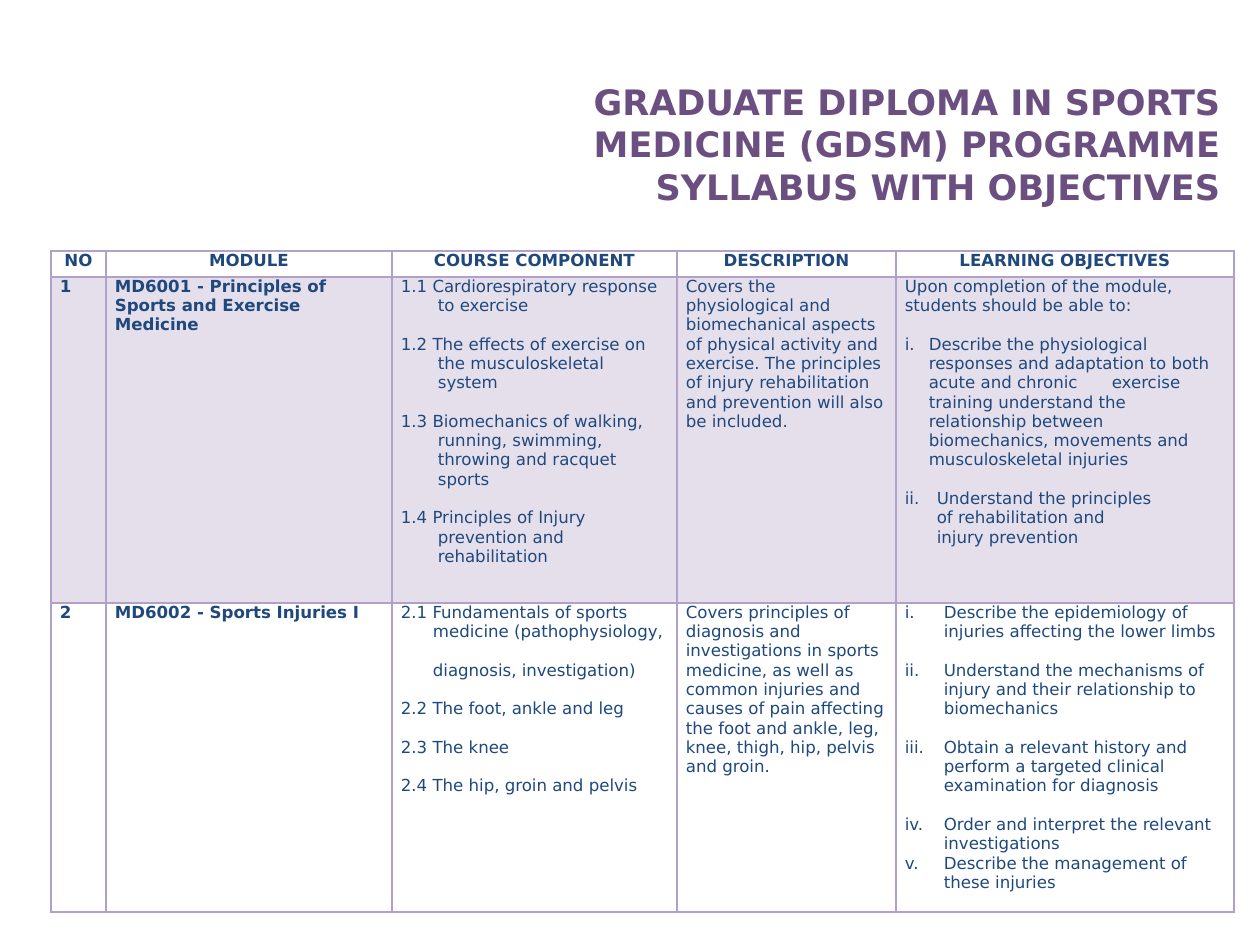
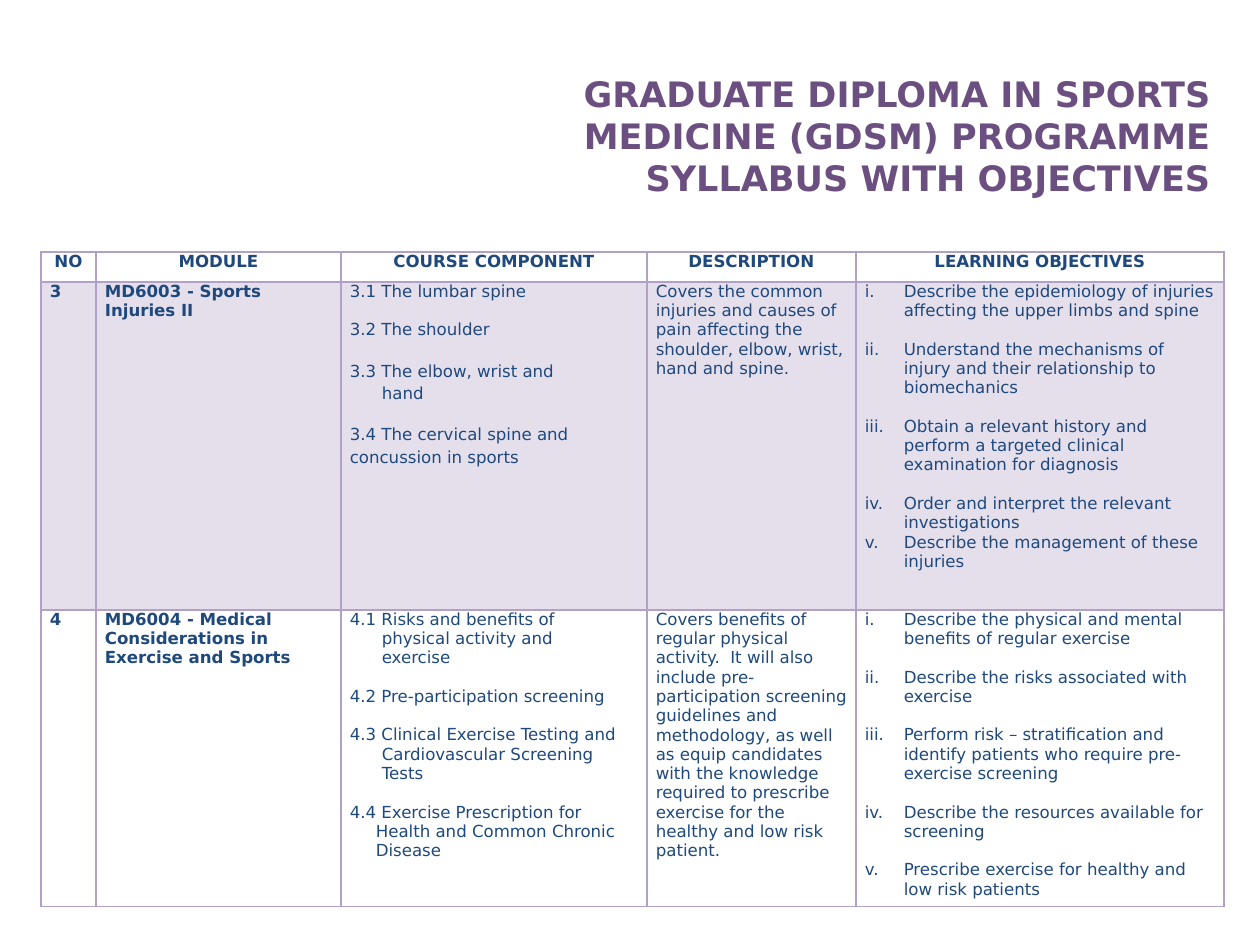
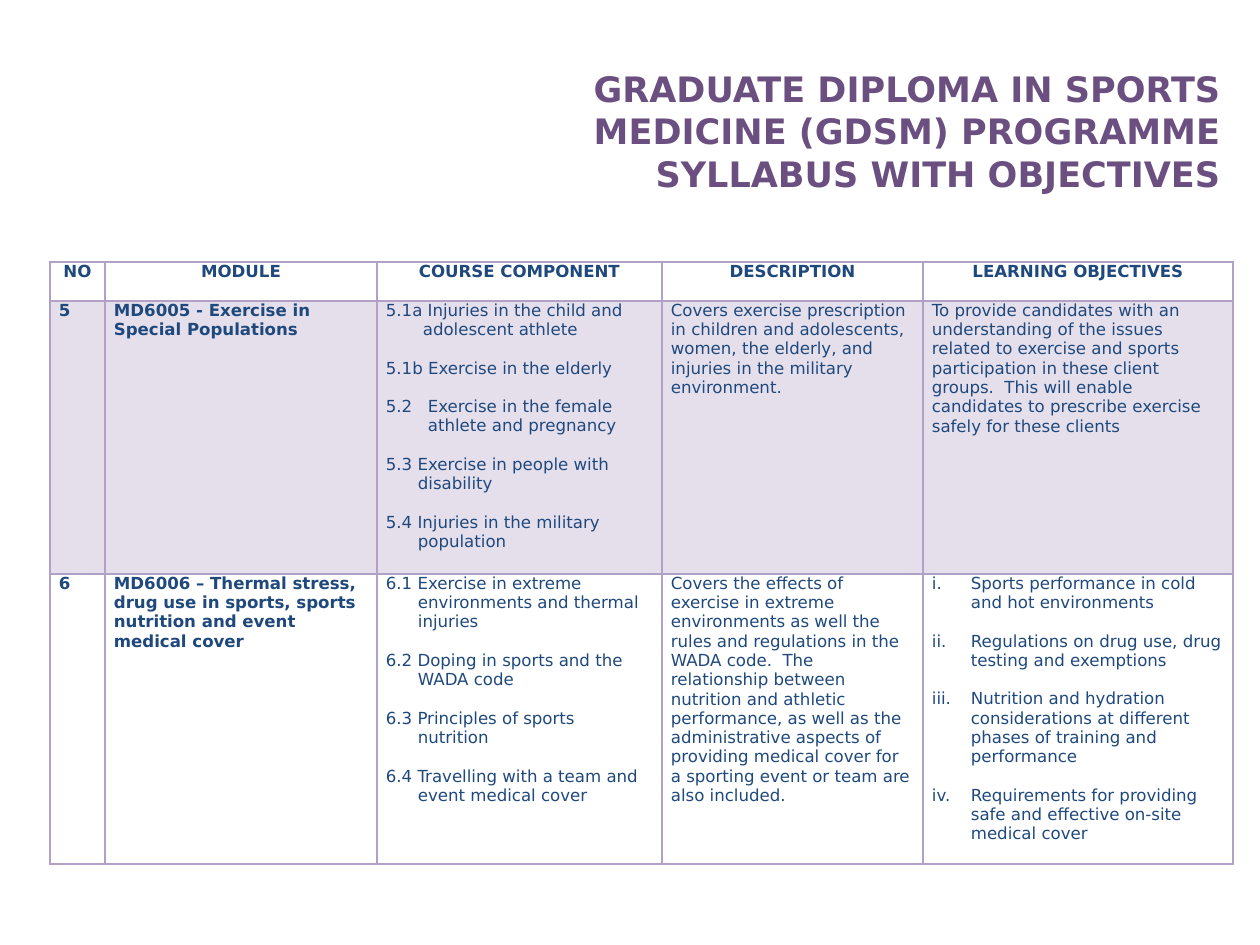
"""Build the three syllabus slides of the sports medicine diploma."""
from lxml import etree
from pptx import Presentation
from pptx.dml.color import RGBColor
from pptx.enum.text import MSO_ANCHOR, PP_ALIGN
from pptx.oxml.ns import qn
from pptx.util import Pt

PX = 7257
MIDDLE = MSO_ANCHOR.MIDDLE
CENTER, LEFT, RIGHT = PP_ALIGN.CENTER, PP_ALIGN.LEFT, PP_ALIGN.RIGHT

PURPLE, NAVY, LILAC, RULE = "6C4F81", "1F497D", "E5DFEC", "B2A1C7"
TITLE = "GRADUATE DIPLOMA IN SPORTS MEDICINE (GDSM) PROGRAMME SYLLABUS WITH OBJECTIVES"
HEADINGS = ["NO", "MODULE", "COURSE COMPONENT", "DESCRIPTION", "LEARNING OBJECTIVES"]
TITLE_FONT = {"name": "DejaVu Sans", "size": Pt(20), "bold": True}
CELL_FONT = {"name": "DejaVu Sans", "size": Pt(9.5)}
CELL_MARGINS = {"margin_left": 9 * PX, "margin_right": 9 * PX, "margin_top": 0, "margin_bottom": 0}
BLOCK_GAP = Pt(11)
TAB_STOP = 207

# Sections are (hanging indent, text) or (hanging indent, text, line spacing).
PAGES = [
    {
        "title": (384, 13, 849, 262),
        "table": (51, 251),
        "columns": [55, 286, 285, 219, 338],
        "rows": [26, 326, 309],
        "modules": [
            [
                "1",
                "MD6001 - Principles of Sports and Exercise Medicine",
                [(37, "1.1 Cardiorespiratory response to exercise\n\n"
                      "1.2 The effects of exercise on the musculoskeletal system\n\n"
                      "1.3 Biomechanics of walking, running, swimming, throwing and racquet sports\n\n"
                      "1.4 Principles of Injury prevention and rehabilitation")],
                "Covers the physiological and biomechanical aspects of physical activity and exercise. "
                "The principles of injury rehabilitation and prevention will also be included.",
                [(0, "Upon completion of the module, students should be able to:"),
                 (24, "# Describe the physiological responses and adaptation to both acute and chronic\t"
                      "exercise training understand the relationship between biomechanics, movements "
                      "and musculoskeletal injuries"),
                 (32, "# Understand the principles\nof rehabilitation and\ninjury prevention")],
            ],
            [
                "2",
                "MD6002 - Sports Injuries I",
                [(32, "2.1 Fundamentals of sports\nmedicine (pathophysiology,\n\n"
                      "diagnosis, investigation)\n\n"
                      "2.2 The foot, ankle and leg\n\n"
                      "2.3 The knee\n\n"
                      "2.4 The hip, groin and pelvis")],
                "Covers principles of diagnosis and investigations in sports medicine, as well as common "
                "injuries and causes of pain affecting the foot and ankle, leg, knee, thigh, hip, pelvis "
                "and groin.",
                [(39, "# Describe the epidemiology of injuries affecting the lower limbs\n\n"
                      "# Understand the mechanisms of injury and their relationship to biomechanics\n\n"
                      "# Obtain a relevant history and perform a targeted clinical examination for diagnosis\n\n"
                      "# Order and interpret the relevant investigations\n"
                      "# Describe the management of these injuries")],
            ],
        ],
    },
    {
        "title": (428, 4, 795, 262),
        "table": (41, 252),
        "columns": [55, 245, 306, 209, 368],
        "rows": [30, 328, 290],
        "modules": [
            [
                "3",
                "MD6003 - Sports Injuries II",
                [(32, "3.1 The lumbar spine\n\n3.2 The shoulder"),
                 (32, "3.3 The elbow, wrist and\nhand", 1.15),
                 (0, "3.4 The cervical spine and concussion in sports", 1.15)],
                "Covers the common injuries and causes of pain affecting the shoulder, elbow, wrist, "
                "hand and spine.",
                [(39, "# Describe the epidemiology of injuries affecting the upper limbs and spine\n\n"
                      "# Understand the mechanisms of injury and their relationship to biomechanics\n\n"
                      "# Obtain a relevant history and perform a targeted clinical examination for diagnosis\n\n"
                      "# Order and interpret the relevant investigations\n"
                      "# Describe the management of these injuries")],
            ],
            [
                "4",
                "MD6004 - Medical Considerations in Exercise and Sports",
                [(32, "4.1 Risks and benefits of\nphysical activity and\nexercise\n\n"
                      "4.2 Pre-participation screening\n\n"
                      "4.3 Clinical Exercise Testing and\nCardiovascular Screening\nTests"),
                 (26, "4.4 Exercise Prescription for\nHealth and Common Chronic\nDisease")],
                "Covers benefits of regular physical activity.  It will also include pre-participation "
                "screening guidelines and methodology, as well as equip candidates with the knowledge "
                "required to prescribe exercise for the healthy and low risk patient.",
                [(39, "# Describe the physical and mental benefits of regular exercise\n\n"
                      "# Describe the risks associated with exercise\n\n"
                      "# Perform risk – stratification and identify patients who require "
                      "pre-exercise screening\n\n"
                      "# Describe the resources available for screening\n\n"
                      "# Prescribe exercise for healthy and low risk patients")],
            ],
        ],
    },
    {
        "title": (438, 0, 795, 262),
        "table": (50, 262),
        "columns": [55, 272, 285, 261, 310],
        "rows": [39, 273, 290],
        "modules": [
            [
                "5",
                "MD6005 - Exercise in Special Populations",
                [(37, "5.1a Injuries in the child and\nadolescent athlete\n\n"
                      "5.1b Exercise in the elderly"),
                 (42, "5.2\tExercise in the female\nathlete and pregnancy"),
                 (32, "5.3 Exercise in people with\ndisability\n\n"
                      "5.4 Injuries in the military\npopulation")],
                "Covers exercise prescription in children and adolescents, women, the elderly, and "
                "injuries in the military environment.",
                "To provide candidates with an understanding of the issues related to exercise and "
                "sports participation in these client groups.  This will enable candidates to "
                "prescribe exercise safely for these clients",
            ],
            [
                "6",
                "MD6006 – Thermal stress, drug use in sports, sports nutrition and event medical cover",
                [(32, "6.1 Exercise in extreme\nenvironments and thermal\ninjuries\n\n"
                      "6.2 Doping in sports and the\nWADA code\n\n"
                      "6.3 Principles of sports\nnutrition\n\n"
                      "6.4 Travelling with a team and\nevent medical cover")],
                "Covers the effects of exercise in extreme environments as well the rules and regulations "
                "in the WADA code.  The relationship between nutrition and athletic performance, as well "
                "as the administrative aspects of providing medical cover for a sporting event or team "
                "are also included.",
                [(39, "# Sports performance in cold and hot environments\n\n"
                      "# Regulations on drug use, drug testing and exemptions\n\n"
                      "# Nutrition and hydration considerations at different phases of training "
                      "and performance\n\n"
                      "# Requirements for providing safe and effective on-site medical cover")],
            ],
        ],
    },
]


def color(hex_text):
    return RGBColor.from_string(hex_text)


def write(para, text, hex_text, formats):
    span = para.add_run()
    span.text = text
    span.font.color.rgb = color(hex_text)
    for name, value in formats.items():
        setattr(span.font, name, value)


deck = Presentation()
deck.slide_width, deck.slide_height = 1260 * PX, 945 * PX

for content in PAGES:
    page = deck.slides.add_slide(deck.slide_layouts[6])

    box = page.shapes.add_textbox(*[length * PX for length in content["title"]])
    box.text_frame.word_wrap = True
    box.text_frame.vertical_anchor = MIDDLE
    para = box.text_frame.paragraphs[0]
    para.alignment = RIGHT
    write(para, TITLE, PURPLE, TITLE_FONT)

    left, top = content["table"]
    widths, heights = content["columns"], content["rows"]
    table = page.shapes.add_table(
        len(heights), len(widths), left * PX, top * PX, sum(widths) * PX, sum(heights) * PX
    ).table
    table.first_row = table.horz_banding = False
    for column, width in zip(table.columns, widths):
        column.width = width * PX
    for row, height in zip(table.rows, heights):
        row.height = height * PX

    for row_index, entries in enumerate([HEADINGS] + content["modules"]):
        for column_index, entry in enumerate(entries):
            cell = table.cell(row_index, column_index)
            for name, value in CELL_MARGINS.items():
                setattr(cell, name, value)
            if row_index == 1:
                cell.fill.solid()
                cell.fill.fore_color.rgb = color(LILAC)
            else:
                cell.fill.background()

            thick_sides = {0: ["lnB"], 1: ["lnT"]}.get(row_index, [])
            for position, side in enumerate(["lnL", "lnR", "lnT", "lnB"]):
                line = etree.Element(qn("a:" + side), w=str(Pt(1.5 if side in thick_sides else 1)))
                fill = etree.SubElement(line, qn("a:solidFill"))
                etree.SubElement(fill, qn("a:srgbClr"), val=RULE)
                cell._tc.get_or_add_tcPr().insert(position, line)

            formats = {**CELL_FONT, "bold": row_index == 0 or column_index < 2}
            sections = [(0, entry)] if isinstance(entry, str) else entry
            para = None
            for hang, text, *spacing in sections:
                for block in text.split("\n\n"):
                    for line_index, line_text in enumerate(block.split("\n")):
                        first = para is None
                        frame = cell.text_frame
                        para = frame.paragraphs[0] if first else frame.add_paragraph()
                        para.alignment = CENTER if row_index == 0 else LEFT
                        if spacing:
                            para.line_spacing = spacing[0]
                        if line_index == 0 and not first:
                            para.space_before = BLOCK_GAP
                        numbered = line_text.startswith("# ")
                        properties = para._p.get_or_add_pPr()
                        if hang:
                            hanging = numbered or line_text[0].isdigit()
                            properties.set("marL", str(hang * PX))
                            properties.set("indent", str(-hang * PX if hanging else 0))
                        if numbered:
                            etree.SubElement(properties, qn("a:buAutoNum"), type="romanLcPeriod")
                            if "\t" in line_text:
                                stops = etree.SubElement(properties, qn("a:tabLst"))
                                etree.SubElement(stops, qn("a:tab"), pos=str(TAB_STOP * PX), algn="l")
                        write(para, line_text.removeprefix("# "), NAVY, formats)

deck.save("out.pptx")
